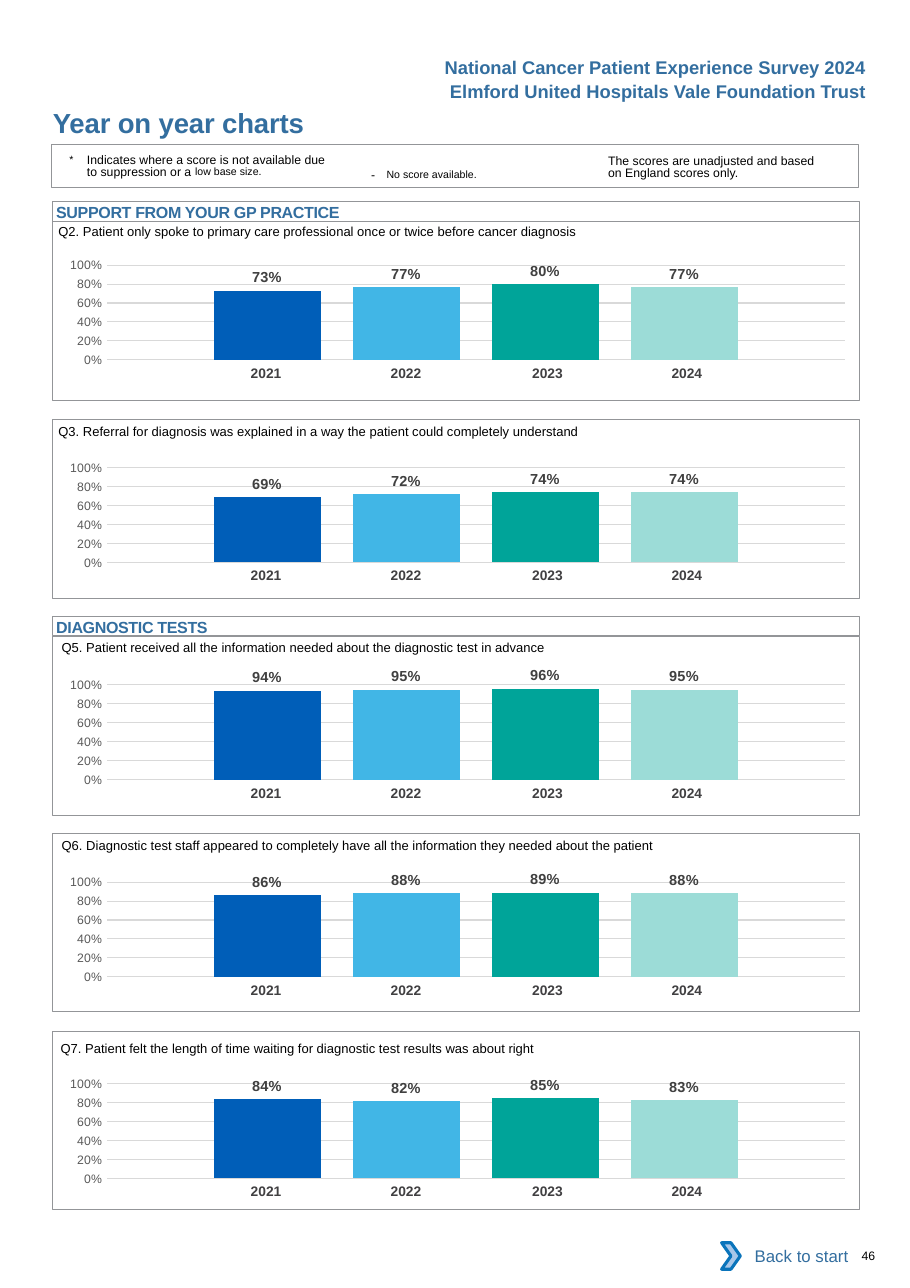
from lxml import etree
from pptx import Presentation
from pptx import util as u
from pptx.chart.data import CategoryChartData
from pptx.dml.color import RGBColor
from pptx.enum import chart as ch, shapes, text
from pptx.oxml import ns

HUES = {
    "head": "336E9F", "body": "000000", "rule": "939598", "white": "FFFFFF",
    "year": "414042", "label": "404040", "tick": "595959", "grid": "D9D9D9",
    "arrow": "A8C7E9", "edge": "0A74BB",
}
BARS = ["005EB8", "41B6E6", "00A499", "9CDCD7"]
YEARS = ["2021", "2022", "2023", "2024"]
WIDTHS = [1.27, 1.27, 1.34, 1.27]
PADS = [0, 0, 0.04, 0.12]
LEFT, WIDE = 0.48, 7.32
PLAIN = "{2D5ABB26-0587-4C30-8999-92F81FD0307C}"
PLOT = {"x": 0.079, "y": 0.145, "w": 0.915, "h": 0.666}

# Question, its left and top, frame top, chart top, yearly scores
PANELS = [
    ("Q2. Patient only spoke to primary care professional once or twice "
     "before cancer diagnosis",
     0.53, 1.94, 2.01, 2.22, [0.73, 0.77, 0.8, 0.77]),
    ("Q3. Referral for diagnosis was explained in a way the patient could "
     "completely understand",
     0.53, 3.75, 3.81, 4.06, [0.69, 0.72, 0.74, 0.74]),
    ("Q5. Patient received all the information needed about the diagnostic "
     "test in advance",
     0.56, 5.71, 5.78, 6.03, [0.94, 0.95, 0.96, 0.95]),
    ("Q6. Diagnostic test staff appeared to completely have all the "
     "information they needed about the patient",
     0.56, 7.51, 7.56, 7.82, [0.86, 0.88, 0.89, 0.88]),
    ("Q7. Patient felt the length of time waiting for diagnostic test "
     "results was about right",
     0.55, 9.35, 9.36, 9.65, [0.84, 0.82, 0.85, 0.83]),
]
SECTIONS = [("SUPPORT FROM YOUR GP PRACTICE", 1.83), ("DIAGNOSTIC TESTS", 5.59)]


def tint(name):
    return RGBColor.from_string(HUES.get(name, name))


def style(font, size, hue="body", bold=False, face="Arial"):
    font.size, font.bold, font.name = u.Pt(size), bold, face
    font.color.rgb = tint(hue)


def write(frame, runs, size=8, hue="body", bold=False, align="LEFT",
          pads=(0, 0, 0, 0), anchor="TOP", wrap=True, lead=None, hang=0):
    """Fill a text frame; runs is a string or (text, size, raise, spacing) rows."""
    frame.word_wrap = wrap
    frame.vertical_anchor = text.MSO_ANCHOR[anchor]
    (frame.margin_left, frame.margin_top,
     frame.margin_right, frame.margin_bottom) = map(u.Inches, pads)
    para = frame.paragraphs[0]
    para.alignment = text.PP_ALIGN[align]
    if lead:
        para.line_spacing = u.Pt(lead)
    if hang:
        props = para._p.get_or_add_pPr()
        props.set("marL", str(u.Inches(hang)))
        props.set("indent", str(-u.Inches(hang)))
    for words, points, rise, space in (
            [(runs, size, 0, 0)] if isinstance(runs, str) else runs):
        run = para.add_run()
        run.text = words
        style(run.font, points, hue, bold)
        for key, val in (("baseline", rise * 1000), ("spc", space * 100)):
            if val:
                run._r.get_or_add_rPr().set(key, str(int(val)))


def label(slide, box, runs, **form):
    write(slide.shapes.add_textbox(*map(u.Inches, box)).text_frame, runs, **form)


def block(slide, box, kind="RECTANGLE", fill=None, line=None, weight=0.5):
    shape = slide.shapes.add_shape(
        shapes.MSO_SHAPE[kind], *map(u.Inches, box))
    shape.shadow.inherit = False
    if fill:
        shape.fill.solid()
        shape.fill.fore_color.rgb = tint(fill)
    else:
        shape.fill.background()
    if line:
        shape.line.color.rgb = tint(line)
        shape.line.width = u.Pt(weight)
    else:
        shape.line.fill.background()
    return shape


def years(slide, top):
    box = map(u.Inches, (1.73, top, sum(WIDTHS), 0.27))
    table = slide.shapes.add_table(1, len(YEARS), *box).table
    table.first_row = table.horz_banding = False
    table._tbl.tblPr.find(ns.qn("a:tableStyleId")).text = PLAIN
    for col, (year, width, pad) in enumerate(zip(YEARS, WIDTHS, PADS)):
        table.columns[col].width = u.Inches(width)
        cell = table.cell(0, col)
        cell.fill.background()
        write(cell.text_frame, year, size=9, hue="year", bold=True,
              align="CENTER")
        cell.margin_left, cell.margin_right = u.Inches(0.1), u.Inches(pad)
        cell.margin_top = cell.margin_bottom = u.Inches(0.05)


def place(chart):
    """Fix the inner plot area as shares of the chart."""
    area = chart._chartSpace.find(".//" + ns.qn("c:plotArea"))
    for old in area.findall(ns.qn("c:layout")):
        area.remove(old)
    layout = etree.Element(ns.qn("c:layout"))
    area.insert(0, layout)
    manual = etree.SubElement(layout, ns.qn("c:manualLayout"))
    parts = {"layoutTarget": "inner", "xMode": "edge", "yMode": "edge", **PLOT}
    for tag, val in parts.items():
        etree.SubElement(manual, ns.qn("c:" + tag)).set("val", str(val))


def graph(slide, top, scores):
    data = CategoryChartData(number_format="0%")
    data.categories = ["1"]
    for num, score in enumerate(scores, 1):
        data.add_series(f"Series {num}", [score])
    chart = slide.shapes.add_chart(
        ch.XL_CHART_TYPE.COLUMN_CLUSTERED,
        *map(u.Inches, (0.39, top, WIDE, 1.29)), data).chart
    chart.has_legend = chart.has_title = False
    style(chart.font, 10, face="Calibri")
    chart.category_axis.visible = False

    # Score axis
    axis = chart.value_axis
    axis.minimum_scale, axis.maximum_scale, axis.major_unit = 0, 1, 0.2
    axis.major_tick_mark = axis.minor_tick_mark = ch.XL_TICK_MARK.NONE
    axis.format.line.fill.background()
    axis.major_gridlines.format.line.color.rgb = tint("grid")
    axis.major_gridlines.format.line.width = u.Pt(0.75)
    axis.tick_labels.number_format = "0%"
    axis.tick_labels.number_format_is_linked = False
    style(axis.tick_labels.font, 8, "tick")

    # Bars and their labels
    plot = chart.plots[0]
    plot.gap_width, plot.overlap, plot.vary_by_categories = 200, -30, False
    for series, hue in zip(plot.series, BARS):
        series.format.fill.solid()
        series.format.fill.fore_color.rgb = tint(hue)
        marks = series.data_labels
        marks.show_value = True
        marks.position = ch.XL_LABEL_POSITION.OUTSIDE_END
        marks.number_format, marks.number_format_is_linked = "0%", False
        style(marks.font, 9.5, "label", True)
    place(chart)


def panel(slide, query, left, top, frame, plot, scores):
    label(slide, (left, top, 7.2, 0.24), query, size=8.5, pads=(0, 0.09, 0, 0))
    years(slide, plot + 1.05)
    graph(slide, plot, scores)
    block(slide, (LEFT, frame, WIDE, 1.62), line="rule")


def main():
    deck = Presentation()
    deck.slide_width, deck.slide_height = u.Inches(8.26), u.Inches(11.69)
    slide = deck.slides.add_slide(deck.slide_layouts[6])

    # Headings
    for words, top in (
            ("National Cancer Patient Experience Survey 2024", 0.46),
            ("Elmford United Hospitals Vale Foundation Trust", 0.68)):
        label(slide, (3.67, top, 4.29, 0.3), words, size=12, hue="head",
              bold=True, align="RIGHT", pads=(0.1, 0.05, 0.1, 0.05))
    label(slide, (0.48, 0.96, 4.5, 0.3),
          [("Year on year charts", 18, 0, -0.1)], hue="head", bold=True)

    # Key
    block(slide, (0.47, 1.31, WIDE, 0.39), line="rule", weight=0.75)
    label(slide, (0.63, 1.38, 2.4, 0.27),
          [("*\t", 12, 3, 0),
           ("Indicates where a score is not available due to suppression or a ",
            8, 0, 0),
           ("low base size.", 12, 7, 0)],
          pads=(0, 0.03, 0, 0), lead=8.1, hang=0.16)
    label(slide, (3.27, 1.41, 1.83, 0.24),
          [("- ", 8, 0, 2.6), ("No score available.", 12, 3, 0)],
          pads=(0.1, 0.05, 0.1, 0.05))
    label(slide, (5.52, 1.38, 1.98, 0.27),
          "The scores are unadjusted and based on England scores only.",
          pads=(0, 0.03, 0, 0), lead=8.1)

    # Sections and questions
    for words, top in SECTIONS:
        bar = block(slide, (LEFT, top, WIDE, 0.18), line="rule")
        write(bar.text_frame, [(words, 10.5, 0, -0.2)], hue="head", bold=True,
              pads=(0.03, 0.01, 0, 0))
    for row in PANELS:
        panel(slide, *row)

    # Footer
    back = block(slide, (6.62, 11.19, 1.18, 0.42), fill="white")
    write(back.text_frame, "Back to start", size=11, hue="head", align="RIGHT",
          pads=(0.1, 0.05, 0.1, 0.05), anchor="MIDDLE")
    block(slide, (6.55, 11.28, 0.17, 0.24), "CHEVRON", "arrow", "edge", 2)
    label(slide, (7.82, 11.33, 0.41, 0.13), "46")
    deck.save("out.pptx")


if __name__ == "__main__":
    main()
